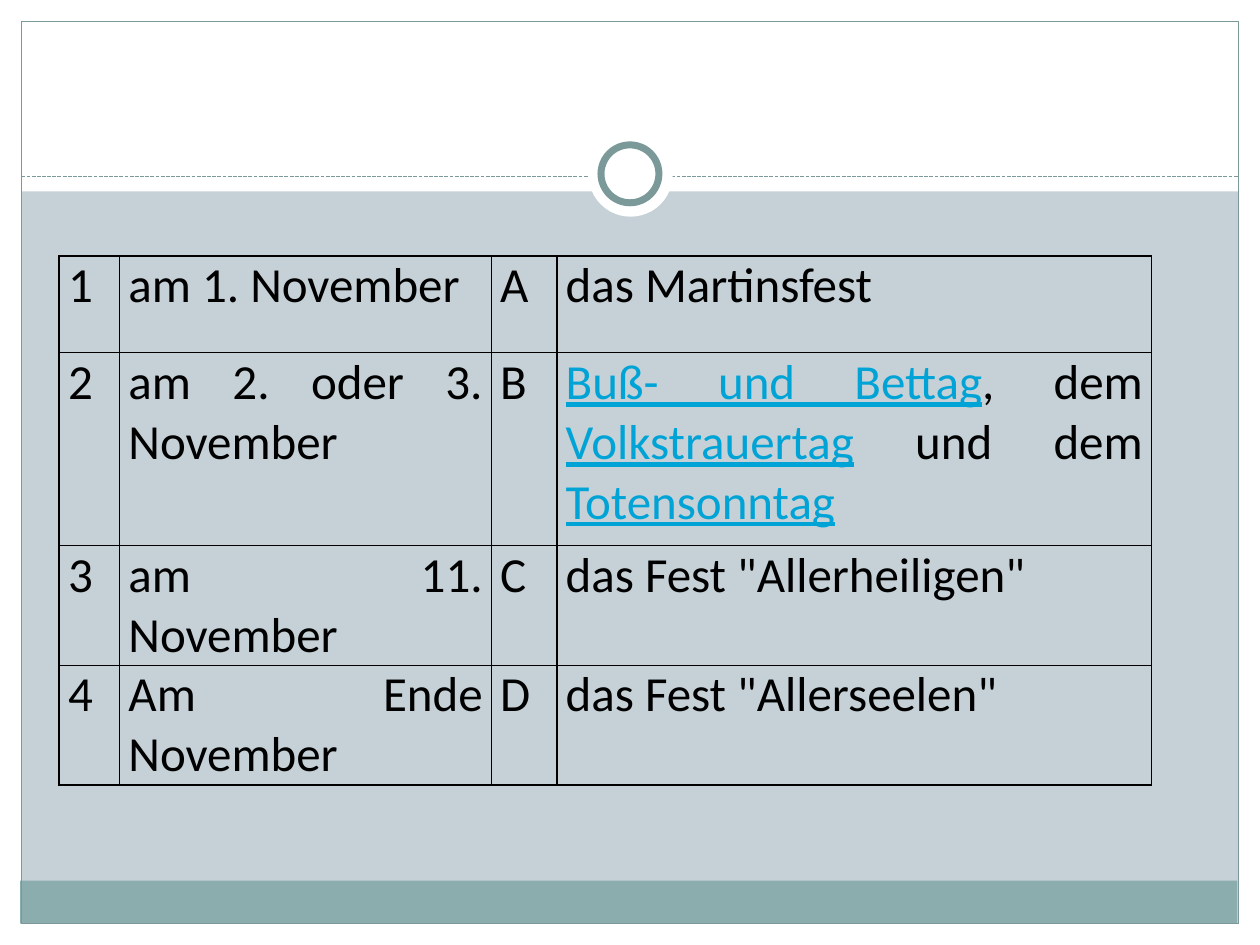
from lxml.etree import SubElement
from pptx import Presentation
from pptx.dml.color import RGBColor
from pptx.enum.dml import MSO_LINE
from pptx.enum.shapes import MSO_CONNECTOR, MSO_SHAPE
from pptx.enum.text import PP_ALIGN
from pptx.oxml.ns import qn
from pptx.util import Inches, Pt

COLORS = {
    "background": "C5D1D7",
    "white": "FFFFFF",
    "band": "8CADAE",
    "accent": "7C999A",
    "text": "000000",
    "link": "00A3D6",
}
CELL_FORMAT = {
    "margin_left": Inches(0.07),
    "margin_right": Inches(0.07),
    "margin_top": 0,
    "margin_bottom": 0,
}
FONT_FORMAT = {"name": "Calibri", "size": Pt(28), "bold": False}

# A cell is a list of (text, is_underlined) runs or a plain string
HOLIDAYS = [
    ["1", "am 1. November", "A", "das Martinsfest"],
    ["2", "am 2. oder 3. November", "B",
     [("Buß- und Bettag", True), (", dem ", False), ("Volkstrauertag", True),
      (" und dem ", False), ("Totensonntag", True)]],
    ["3", "am 11. November", "C", 'das Fest "Allerheiligen"'],
    ["4", "Am Ende November", "D", 'das Fest "Allerseelen"'],
]
COLUMN_WIDTHS = [0.48, 2.95, 0.52, 4.72]
ROW_HEIGHTS = [0.77, 1.53, 0.77, 0.77]


def rgb(name):
    return RGBColor.from_string(COLORS[name])


def apply_format(target, values):
    for name, value in values.items():
        setattr(target, name, value)


class SlideBuilder:
    def __init__(self, slide):
        self.slide = slide

    def background(self, color):
        fill = self.slide.background.fill
        fill.solid()
        fill.fore_color.rgb = rgb(color)

    def shape(self, kind, box, fill=None, line=None, width=0.75):
        shape = self.slide.shapes.add_shape(kind, *map(Inches, box))
        shape.shadow.inherit = False
        if fill:
            shape.fill.solid()
            shape.fill.fore_color.rgb = rgb(fill)
        else:
            shape.fill.background()
        if line:
            shape.line.color.rgb = rgb(line)
            shape.line.width = Pt(width)
        else:
            shape.line.fill.background()

    def dashed_line(self, start, end, color):
        connector = self.slide.shapes.add_connector(
            MSO_CONNECTOR.STRAIGHT, *map(Inches, start + end))
        connector.line.color.rgb = rgb(color)
        apply_format(connector.line,
                     {"width": Pt(0.75), "dash_style": MSO_LINE.SQUARE_DOT})
        SubElement(connector._element.spPr, qn("a:effectLst"))

    def table(self, left, top, widths, heights, rows):
        frame = self.slide.shapes.add_table(
            len(rows), len(widths), Inches(left), Inches(top),
            Inches(sum(widths)), Inches(sum(heights)))
        table = frame.table
        apply_format(table, {"first_row": False, "horz_banding": False})
        for column, width in zip(table.columns, widths):
            column.width = Inches(width)
        for row, height, contents in zip(table.rows, heights, rows):
            row.height = Inches(height)
            for cell, content in zip(row.cells, contents):
                self.cell(cell, content)

    def cell(self, cell, content):
        apply_format(cell, CELL_FORMAT)
        self.borders(cell)
        cell.fill.background()
        paragraph = cell.text_frame.paragraphs[0]
        paragraph.alignment = PP_ALIGN.JUSTIFY
        runs = [(content, False)] if isinstance(content, str) else content
        for text, underlined in runs:
            run = paragraph.add_run()
            run.text = text
            apply_format(run.font, {**FONT_FORMAT, "underline": underlined})
            run.font.color.rgb = rgb("link" if underlined else "text")

    def borders(self, cell):
        properties = cell._tc.get_or_add_tcPr()
        for side in ("lnL", "lnR", "lnT", "lnB"):
            border = SubElement(properties, qn(f"a:{side}"), w=str(Pt(1)))
            fill = SubElement(border, qn("a:solidFill"))
            SubElement(fill, qn("a:srgbClr"), val=COLORS["text"])


def main():
    presentation = Presentation()
    presentation.slide_width = Inches(10)
    presentation.slide_height = Inches(7.5)
    builder = SlideBuilder(
        presentation.slides.add_slide(presentation.slide_layouts[6]))

    # White margins and header area
    builder.background("background")
    for box in [(0, 7.33, 10, 0.17), (0, 0, 10, 1.52),
                (0, 0, 0.17, 7.5), (9.83, 0, 0.17, 7.5)]:
        builder.shape(MSO_SHAPE.RECTANGLE, box, fill="white")

    # Footer band, frame and header rule
    builder.shape(MSO_SHAPE.RECTANGLE, (0.16, 6.99, 9.66, 0.34), fill="band")
    builder.shape(MSO_SHAPE.RECTANGLE, (0.17, 0.17, 9.66, 7.16), line="accent")
    builder.dashed_line((0.17, 1.4), (9.83, 1.4), "accent")

    # Ring on the header rule
    builder.shape(MSO_SHAPE.OVAL, (4.67, 1.05, 0.67, 0.67), fill="white")
    builder.shape(MSO_SHAPE.OVAL, (4.77, 1.15, 0.46, 0.46),
                  fill="white", line="accent", width=4)

    # Matching exercise: dates and holidays
    builder.table(0.47, 2.03, COLUMN_WIDTHS, ROW_HEIGHTS, HOLIDAYS)

    presentation.save("out.pptx")


if __name__ == "__main__":
    main()
